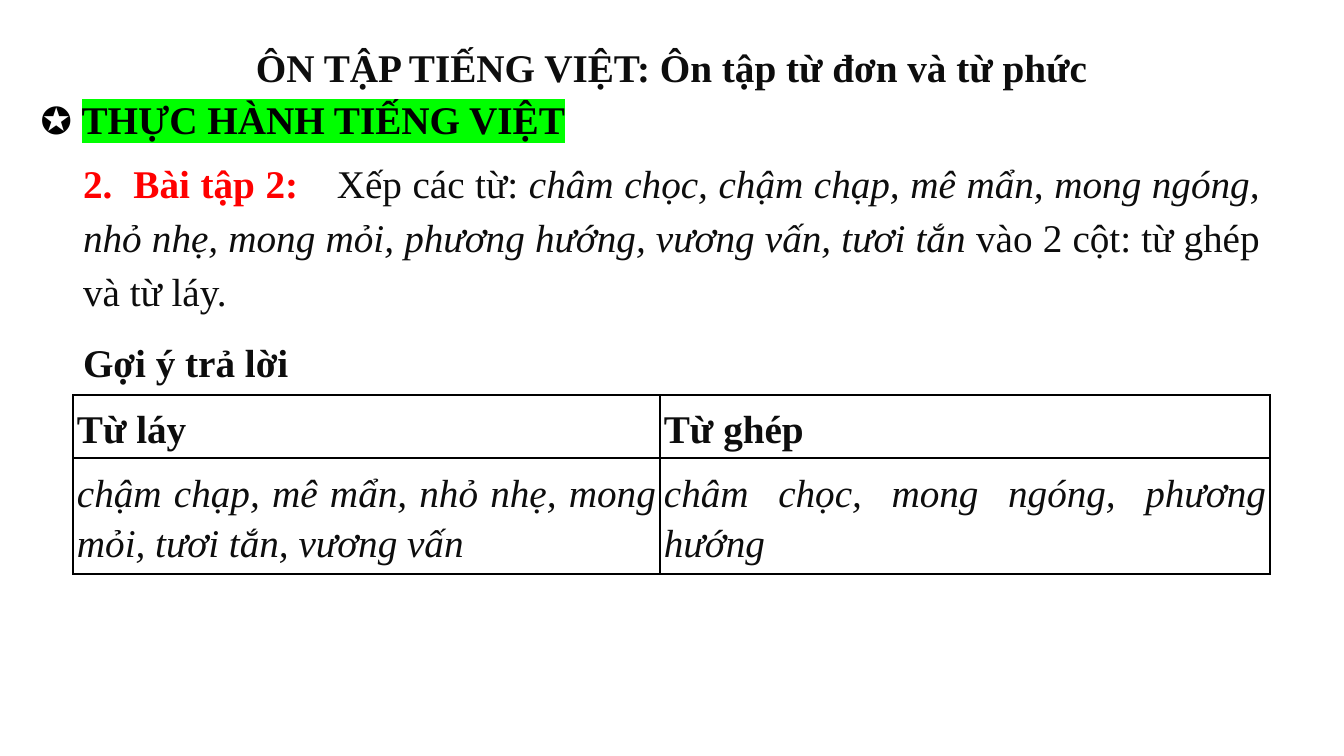
from dataclasses import dataclass

from lxml import etree
from pptx import Presentation
from pptx import util as u
from pptx.dml.color import RGBColor
from pptx.enum import text
from pptx.oxml.ns import qn


@dataclass(frozen=True)
class Theme:
    font: str = "Times New Roman"
    size: int = 28
    line_spacing: float = 1.15
    ink: str = "0D0D0D"
    black: str = "000000"
    red: str = "FF0000"
    green: str = "00FF00"
    white: str = "FFFFFF"


THEME = Theme()
JUSTIFY = text.PP_ALIGN.JUSTIFY


def px(length):
    return u.Emu(round(length * 914400 / 100.8))


def place(shape, box):
    shape.left, shape.top, shape.width, shape.height = map(px, box)
    frame = shape.text_frame
    frame.word_wrap = True
    frame.auto_size = text.MSO_AUTO_SIZE.NONE
    frame.vertical_anchor = text.MSO_ANCHOR.TOP
    return frame


def add_color(parent, tag, color):
    holder = etree.SubElement(parent, qn(tag))
    etree.SubElement(holder, qn("a:srgbClr"), val=color)


def format_paragraph(paragraph, align=JUSTIFY, after=0, tabs=(), color=THEME.ink,
                     bold=None, italic=None):
    paragraph.alignment = align
    paragraph.line_spacing = THEME.line_spacing
    paragraph.space_before = u.Pt(0)
    paragraph.space_after = u.Pt(after)
    properties = paragraph._p.get_or_add_pPr()
    properties.set("marL", "0")
    properties.set("indent", "0")
    etree.SubElement(properties, qn("a:buNone"))
    if tabs:
        tab_list = etree.SubElement(properties, qn("a:tabLst"))
        for position in tabs:
            etree.SubElement(tab_list, qn("a:tab"), pos=str(px(position)), algn="l")
    font = paragraph.font
    font.name, font.size = THEME.font, u.Pt(THEME.size)
    font.bold, font.italic = bold, italic
    font.color.rgb = RGBColor.from_string(color)


def add_run(paragraph, words, bold=None, italic=None, color=None):
    run = paragraph.add_run()
    run.text = words
    run.font.bold, run.font.italic = bold, italic
    if color:
        run.font.color.rgb = RGBColor.from_string(color)
    return run


def add_title(slide, box):
    paragraph = place(slide.shapes.title, box).paragraphs[0]
    add_run(paragraph, "ÔN TẬP TIẾNG VIỆT: Ôn tập từ đơn và từ phức")
    format_paragraph(paragraph, text.PP_ALIGN.CENTER, after=10, bold=True)


def add_section_heading(slide, box):
    paragraph = place(slide.shapes.add_textbox(0, 0, 0, 0), box).paragraphs[0]
    add_run(paragraph, "✪ ")
    heading = add_run(paragraph, "THỰC HÀNH TIẾNG VIỆT", bold=True)
    add_color(heading.font._element, "a:highlight", THEME.green)
    format_paragraph(paragraph, color=THEME.black)


def add_exercise(slide, box):
    frame = place(slide.placeholders[1], box)
    task = frame.paragraphs[0]
    add_run(task, "2.\tBài tập 2:\t", bold=True, color=THEME.red)
    add_run(task, "Xếp các từ: ")
    add_run(task, "châm chọc, chậm chạp, mê mẩn, mong ngóng, nhỏ nhẹ, mong mỏi, "
                  "phương hướng, vương vấn, tươi tắn ", italic=True)
    add_run(task, "vào 2 cột: từ ghép và từ láy.")
    format_paragraph(task, after=12, tabs=(52, 251))
    answer = frame.add_paragraph()
    add_run(answer, "Gợi ý trả lời")
    format_paragraph(answer, bold=True)


def format_cell(cell):
    cell.margin_left = cell.margin_right = cell.margin_top = cell.margin_bottom = px(4)
    cell.vertical_anchor = text.MSO_ANCHOR.MIDDLE
    properties = cell._tc.get_or_add_tcPr()
    for side in ("a:lnL", "a:lnR", "a:lnT", "a:lnB"):
        line = etree.SubElement(properties, qn(side), w=str(u.Pt(1)))
        add_color(line, "a:solidFill", THEME.black)
    cell.fill.solid()
    cell.fill.fore_color.rgb = RGBColor.from_string(THEME.white)


def add_answer_table(slide, box):
    rows = (("Từ láy", "Từ ghép"),
            ("chậm chạp, mê mẩn, nhỏ nhẹ, mong mỏi, tươi tắn, vương vấn",
             "châm chọc, mong ngóng, phương hướng"))
    left, top, width, height = box
    table = slide.shapes.add_table(2, 2, *map(px, box)).table
    first_column, header = 587, 63
    for column, size in zip(table.columns, (first_column, width - first_column)):
        column.width = px(size)
    for row, size in zip(table.rows, (header, height - header)):
        row.height = px(size)
    for row_index, row in enumerate(rows):
        for column_index, words in enumerate(row):
            cell = table.cell(row_index, column_index)
            format_cell(cell)
            paragraph = cell.text_frame.paragraphs[0]
            add_run(paragraph, words)
            is_header = row_index == 0
            format_paragraph(paragraph, bold=is_header, italic=not is_header)


def main():
    presentation = Presentation()
    presentation.slide_width, presentation.slide_height = px(1344), px(756)
    slide = presentation.slides.add_slide(presentation.slide_layouts[1])
    left, width = 73, 1197
    add_title(slide, (left, 31, width, 65))
    add_section_heading(slide, (31, 83, 553, 61))
    add_exercise(slide, (left, 147, width, 242))
    add_answer_table(slide, (left, 395, width, 179))
    presentation.save("out.pptx")


if __name__ == "__main__":
    main()
